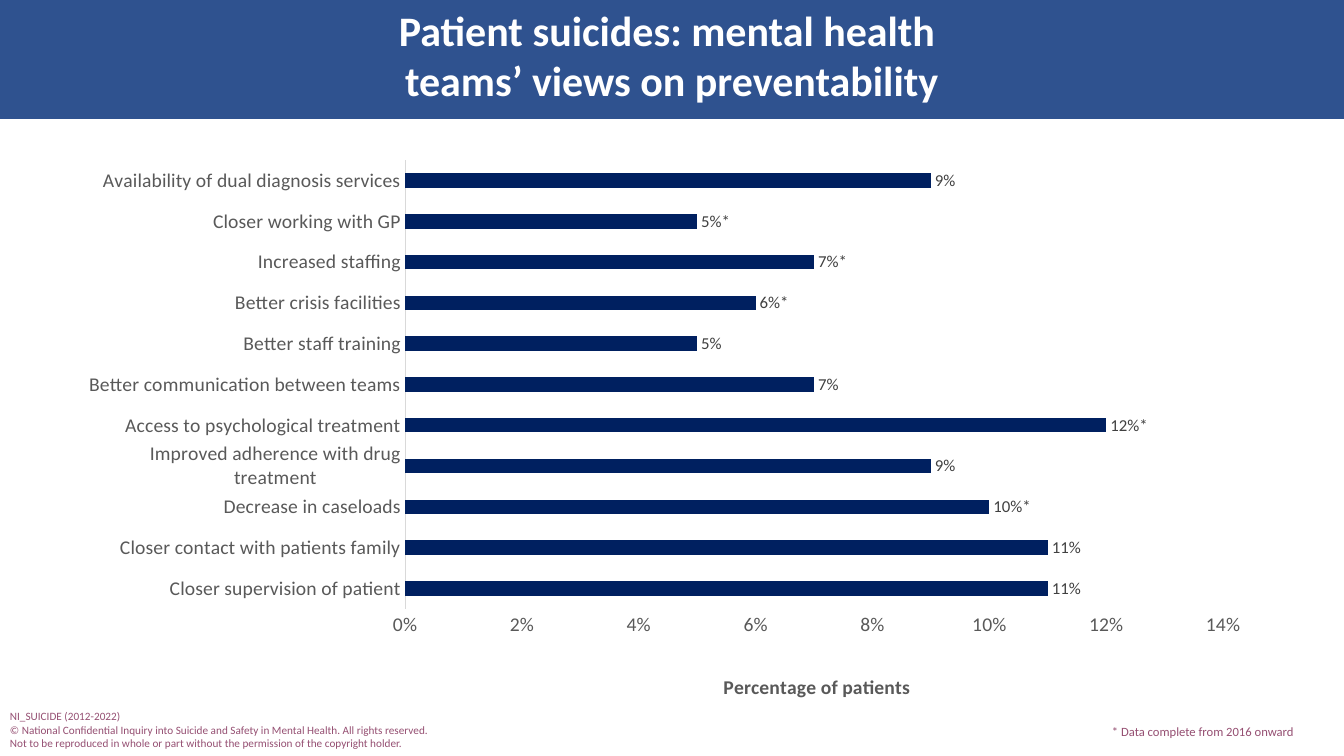
from lxml import etree
from pptx import Presentation
from pptx.chart.data import CategoryChartData
from pptx.dml.color import RGBColor
from pptx.enum.chart import XL_CHART_TYPE, XL_LABEL_POSITION, XL_TICK_MARK
from pptx.enum.shapes import MSO_SHAPE
from pptx.enum.text import MSO_ANCHOR, MSO_AUTO_SIZE, PP_ALIGN
from pptx.oxml.ns import qn
from pptx.util import Inches, Pt

TITLE = ["Patient suicides: mental health ", "teams’ views on preventability"]
NOTE = ["* Data complete from 2016 onward"]
COPYRIGHT = [
    "NI_SUICIDE (2012-2022)",
    "© National Confidential Inquiry into Suicide and Safety in Mental Health. "
    "All rights reserved.",
    "Not to be reproduced in whole or part without the permission of the copyright holder.",
]
AXIS_TITLE = ["Percentage of patients"]
VIEWS = [
    ("Closer supervision of patient", 0.11, ""),
    ("Closer contact with patients family", 0.11, ""),
    ("Decrease in caseloads", 0.10, "10%*"),
    ("Improved adherence with drug treatment", 0.09, ""),
    ("Access to psychological treatment", 0.12, "12%*"),
    ("Better communication between teams", 0.07, ""),
    ("Better staff training", 0.05, ""),
    ("Better crisis facilities", 0.06, "6%*"),
    ("Increased staffing", 0.07, "7%*"),
    ("Closer working with GP", 0.05, "5%*"),
    ("Availability of dual diagnosis services", 0.09, ""),
]

FONT = "Calibri"
WHITE = RGBColor(0xFF, 0xFF, 0xFF)
BLUE = RGBColor(0x2F, 0x52, 0x8F)
NAVY = RGBColor(0x00, 0x20, 0x60)
PLUM = RGBColor(0x95, 0x4F, 0x72)
GREY = RGBColor(0x59, 0x59, 0x59)
DARK = RGBColor(0x40, 0x40, 0x40)
PALE = RGBColor(0xD9, 0xD9, 0xD9)

BAR = XL_CHART_TYPE.BAR_CLUSTERED
OUTSIDE = XL_LABEL_POSITION.OUTSIDE_END
NO_TICK = XL_TICK_MARK.NONE
RECT = MSO_SHAPE.RECTANGLE
MIDDLE = MSO_ANCHOR.MIDDLE
FIXED = MSO_AUTO_SIZE.NONE
CENTER = PP_ALIGN.CENTER


def set_font(font, size, color, bold=False):
    """Format a font."""
    font.name, font.size, font.bold = FONT, Pt(size), bold
    font.color.rgb = color


def write(tf, lines, size, color, bold=False, align=None):
    """Fill a text frame with one paragraph per line."""
    for i, line in enumerate(lines):
        p = tf.paragraphs[0] if i == 0 else tf.add_paragraph()
        p.alignment = align
        r = p.add_run()
        r.text = line
        set_font(r.font, size, color, bold)


def add_text(slide, box, lines, wrap=True, **fmt):
    """Add a text box."""
    tf = slide.shapes.add_textbox(*map(Inches, box)).text_frame
    tf.word_wrap = wrap
    write(tf, lines, **fmt)


def set_layout(parent, index, **values):
    """Place a chart part by fractions of the chart."""
    for old in parent.findall(qn("c:layout")):
        parent.remove(old)
    layout = etree.Element(qn("c:layout"))
    manual = etree.SubElement(layout, qn("c:manualLayout"))
    for name, value in values.items():
        etree.SubElement(manual, qn("c:" + name)).set("val", str(value))
    parent.insert(index, layout)


def add_views_chart(slide):
    """Add the bar chart of views."""
    data = CategoryChartData(number_format="0%")
    data.categories = [name for name, _, _ in VIEWS]
    data.add_series("Series 1", [value for _, value, _ in VIEWS])
    box = map(Inches, (0.79, 1.48, 11.76, 5.52))
    chart = slide.shapes.add_chart(BAR, *box, data).chart
    chart.has_legend = chart.has_title = False
    set_font(chart.font, 10, GREY)

    plot = chart.plots[0]
    plot.gap_width = 182
    plot.vary_by_categories = False
    series = plot.series[0]
    series.format.fill.solid()
    series.format.fill.fore_color.rgb = NAVY
    labels = series.data_labels
    labels.show_value = True
    labels.number_format, labels.number_format_is_linked = "0%", False
    labels.position = OUTSIDE
    set_font(labels.font, 12, DARK)
    for i, (_, _, label) in enumerate(VIEWS):
        if label:
            point_label = series.points[i].data_label
            write(point_label.text_frame, [label], 12, DARK)
            point_label.position = OUTSIDE

    cat, val = chart.category_axis, chart.value_axis
    for axis in (cat, val):
        axis.major_tick_mark = axis.minor_tick_mark = NO_TICK
        axis.has_major_gridlines = False
        set_font(axis.tick_labels.font, 14, GREY)
    cat.format.line.color.rgb = PALE
    cat.format.line.width = Pt(0.75)
    val.format.line.fill.background()
    val.minimum_scale, val.maximum_scale, val.major_unit = 0, 0.14, 0.02
    val.tick_labels.number_format = "0%"
    val.tick_labels.number_format_is_linked = False
    write(val.axis_title.text_frame, AXIS_TITLE, 14, GREY, bold=True)

    space = chart.element if hasattr(chart, "element") else chart._chartSpace
    set_layout(space.find(".//" + qn("c:plotArea")), 0, layoutTarget="inner",
               xMode="edge", yMode="edge", x=0.2745, y=0.02, w=0.69, h=0.81)
    set_layout(space.find(".//" + qn("c:valAx") + "/" + qn("c:title")), 1,
               xMode="edge", yMode="edge", x=0.54, y=0.94)


def main():
    """Build the slide."""
    prs = Presentation()
    prs.slide_width, prs.slide_height = Inches(13.33), Inches(7.5)
    slide = prs.slides.add_slide(prs.slide_layouts[5])

    band = slide.shapes.add_shape(RECT, 0, 0, prs.slide_width, Inches(1.18))
    band.shadow.inherit = False
    band.fill.solid()
    band.fill.fore_color.rgb = BLUE
    band.line.fill.background()

    title = slide.shapes.title
    band.element.addnext(title.element) if hasattr(band, "element") else None
    title.left, title.top = 0, Inches(0.09)
    title.width, title.height = prs.slide_width, Inches(0.91)
    tf = title.text_frame
    tf.auto_size, tf.vertical_anchor = FIXED, MIDDLE
    write(tf, TITLE, 30, WHITE, bold=True, align=CENTER)

    add_text(slide, (10.93, 7.13, 2.05, 0.25), NOTE, size=9, color=PLUM)
    add_text(slide, (0, 6.99, 4.4, 0.51), COPYRIGHT, wrap=False, size=8, color=PLUM)
    add_views_chart(slide)
    prs.save("out.pptx")


if __name__ == "__main__":
    main()
